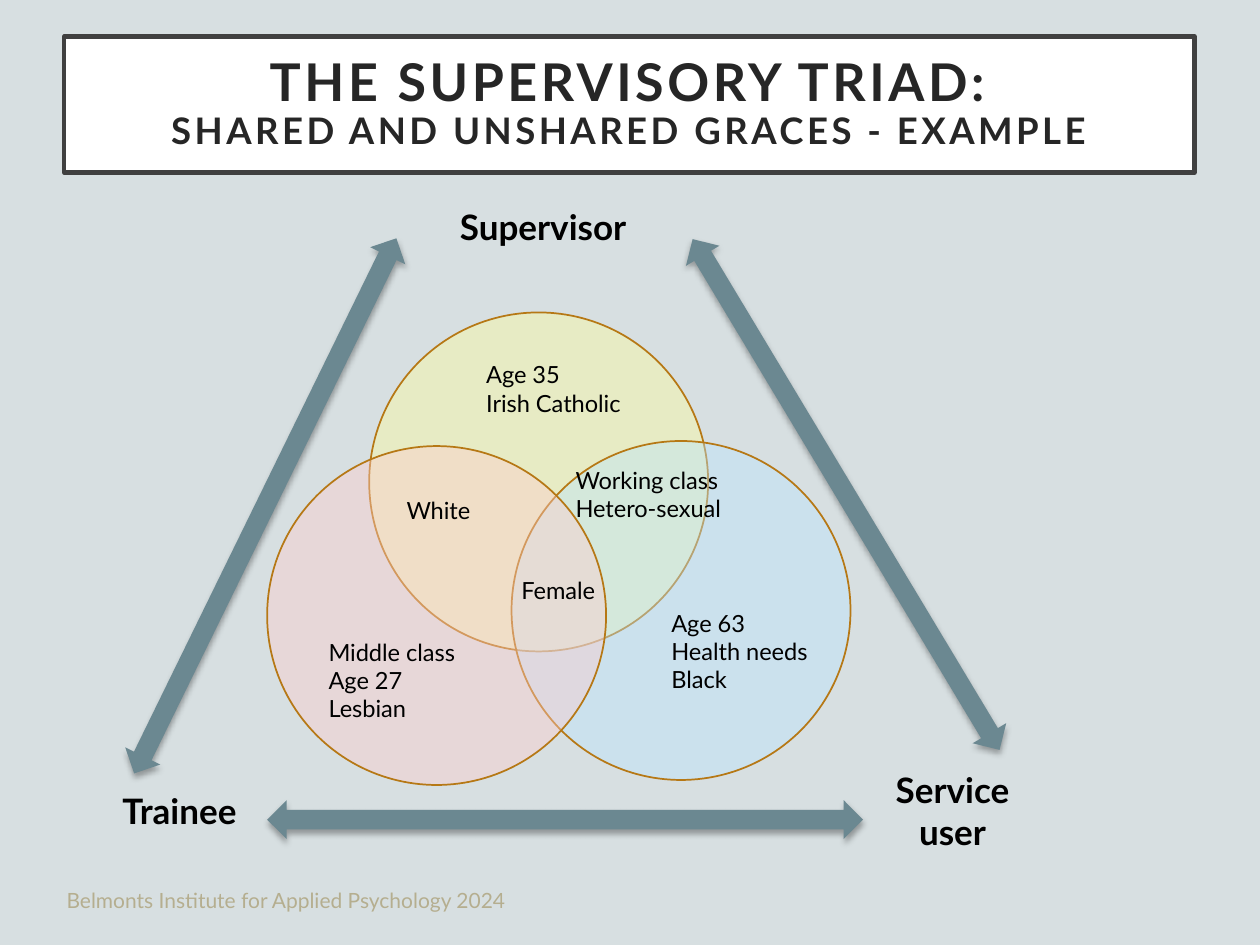
from lxml import etree
from pptx import Presentation
from pptx.dml.color import RGBColor
from pptx.enum.shapes import MSO_SHAPE as Shape
from pptx.enum.text import MSO_ANCHOR as Anchor, MSO_AUTO_SIZE as AutoSize, PP_ALIGN as Align
from pptx.oxml.ns import qn
from pptx.util import Inches, Pt

FONT = "Lato"
COLORS = {
    "background": "D7DFE1",
    "footer": "B5AE8F",
    "title_fill": "FFFFFF",
    "title_line": "404040",
    "title_text": "262626",
    "text": "000000",
    "circle_line": "B67815",
    "supervisor": "FFFF99",
    "service_user": "B9E4FF",
    "trainee": "FFCCCC",
    "arrow": "6B8891",
    "shadow": "000000",
}
CIRCLE_SIZE = 2.69
ARROW_LENGTH, ARROW_HEIGHT = 4.73, 0.31


def rgb(name):
    return RGBColor.from_string(COLORS[name])


def add_alpha(color_element, percent):
    etree.SubElement(color_element, qn("a:alpha")).set("val", str(percent * 1000))


class TriadSlide:
    def __init__(self, deck):
        self.page = deck.slides.add_slide(deck.slide_layouts[5])
        fill = self.page.background.fill
        fill.solid()
        fill.fore_color.rgb = rgb("background")

    def style_font(self, font, size, color="text", bold=False):
        font.name = FONT
        font.size = Pt(size)
        font.bold = bold
        font.color.rgb = rgb(color)

    def title(self, lines, left, top, width, height):
        """Fill the title placeholder with (text, size) lines in one paragraph."""
        box = self.page.shapes.title
        box.left, box.top = Inches(left), Inches(top)
        box.width, box.height = Inches(width), Inches(height)
        box.fill.solid()
        box.fill.fore_color.rgb = rgb("title_fill")
        box.line.color.rgb = rgb("title_line")
        box.line.width = Pt(2.5)
        frame = box.text_frame
        frame.auto_size = AutoSize.NONE
        frame.word_wrap = True
        frame.vertical_anchor = Anchor.MIDDLE
        frame.margin_left = frame.margin_right = Inches(0.2)
        frame.margin_top = frame.margin_bottom = Inches(0.2)
        para = frame.paragraphs[0]
        para.alignment = Align.CENTER
        para.line_spacing = 0.9
        for index, (text, size) in enumerate(lines):
            if index:
                para.add_line_break()
            span = para.add_run()
            span.text = text
            self.style_font(span.font, size, "title_text", bold=True)
            span.font._element.set("spc", "200")

    def text(self, lines, left, top, width, height, size=13.5, color="text",
             bold=False, align=Align.LEFT, anchor=Anchor.TOP):
        box = self.page.shapes.add_textbox(
            Inches(left), Inches(top), Inches(width), Inches(height))
        frame = box.text_frame
        frame.word_wrap = True
        frame.vertical_anchor = anchor
        frame.text = "\n".join(lines)
        for para in frame.paragraphs:
            para.alignment = align
            self.style_font(para.font, size, color, bold)

    def circle(self, left, top, color):
        circle = self.page.shapes.add_shape(
            Shape.OVAL, Inches(left), Inches(top), Inches(CIRCLE_SIZE), Inches(CIRCLE_SIZE))
        circle.shadow.inherit = False
        circle.fill.solid()
        circle.fill.fore_color.rgb = rgb(color)
        add_alpha(circle._element.spPr.find(qn("a:solidFill"))[0], 40)
        circle.line.color.rgb = rgb("circle_line")
        circle.line.width = Pt(1)

    def arrow(self, left, top, rotation):
        """Add a double-headed block arrow with a soft shadow below it."""
        arrow = self.page.shapes.add_shape(
            Shape.LEFT_RIGHT_ARROW, Inches(left), Inches(top),
            Inches(ARROW_LENGTH), Inches(ARROW_HEIGHT))
        arrow.rotation = rotation
        arrow.fill.solid()
        arrow.fill.fore_color.rgb = rgb("arrow")
        arrow.line.fill.background()
        arrow.shadow.inherit = False
        effects = arrow._element.spPr.find(qn("a:effectLst"))
        shadow = etree.SubElement(
            effects, qn("a:outerShdw"), blurRad=str(Pt(3.5)), dist=str(Pt(2.2)),
            dir=str(90 * 60000), rotWithShape="0")
        color = etree.SubElement(shadow, qn("a:srgbClr"), val=COLORS["shadow"])
        add_alpha(color, 32)


def main():
    deck = Presentation()
    deck.slide_width, deck.slide_height = Inches(10), Inches(7.5)
    slide = TriadSlide(deck)

    slide.title([("THE SUPERVISORY TRIAD:", 29.7),
                 ("SHARED AND UNSHARED GRACES - EXAMPLE", 20.9)], 0.51, 0.29, 8.97, 1.08)
    slide.text(["Belmonts Institute for Applied Psychology 2024"], 0.43, 6.89, 4.41, 0.4,
               size=12, color="footer", anchor=Anchor.BOTTOM)

    for left, top, role in [(2.93, 2.48, "supervisor"),
                            (4.06, 3.5, "service_user"),
                            (2.12, 3.54, "trainee")]:
        slide.circle(left, top, role)

    for role, *place in [("Supervisor", 3.52, 1.58, 1.58, 0.44),
                         ("Trainee", 0.86, 6.22, 1.13, 0.44),
                         ("Service user", 6.79, 6.05, 1.54, 0.77)]:
        slide.text([role], *place, size=20, bold=True, align=Align.CENTER)

    for lines, *place in [
        (["Working class", "Hetero-sexual"], 4.47, 3.65, 1.56, 0.56),
        (["Age 35", "Irish Catholic"], 3.76, 2.81, 1.45, 0.56),
        (["Middle class", "Age 27", "Lesbian"], 2.51, 5.01, 1.3, 0.78),
        (["Age 63", "Health needs", "Black"], 5.23, 4.78, 1.31, 0.78),
        (["Female"], 4.04, 4.52, 0.89, 0.33),
    ]:
        slide.text(lines, *place)
    slide.text(["White"], 3.06, 3.89, 0.84, 0.33, align=Align.CENTER)

    for left, top, rotation in [(-0.26, 3.86, 116.1), (4.35, 3.77, 59), (2.12, 6.35, 180)]:
        slide.arrow(left, top, rotation)

    deck.save("out.pptx")


if __name__ == "__main__":
    main()
